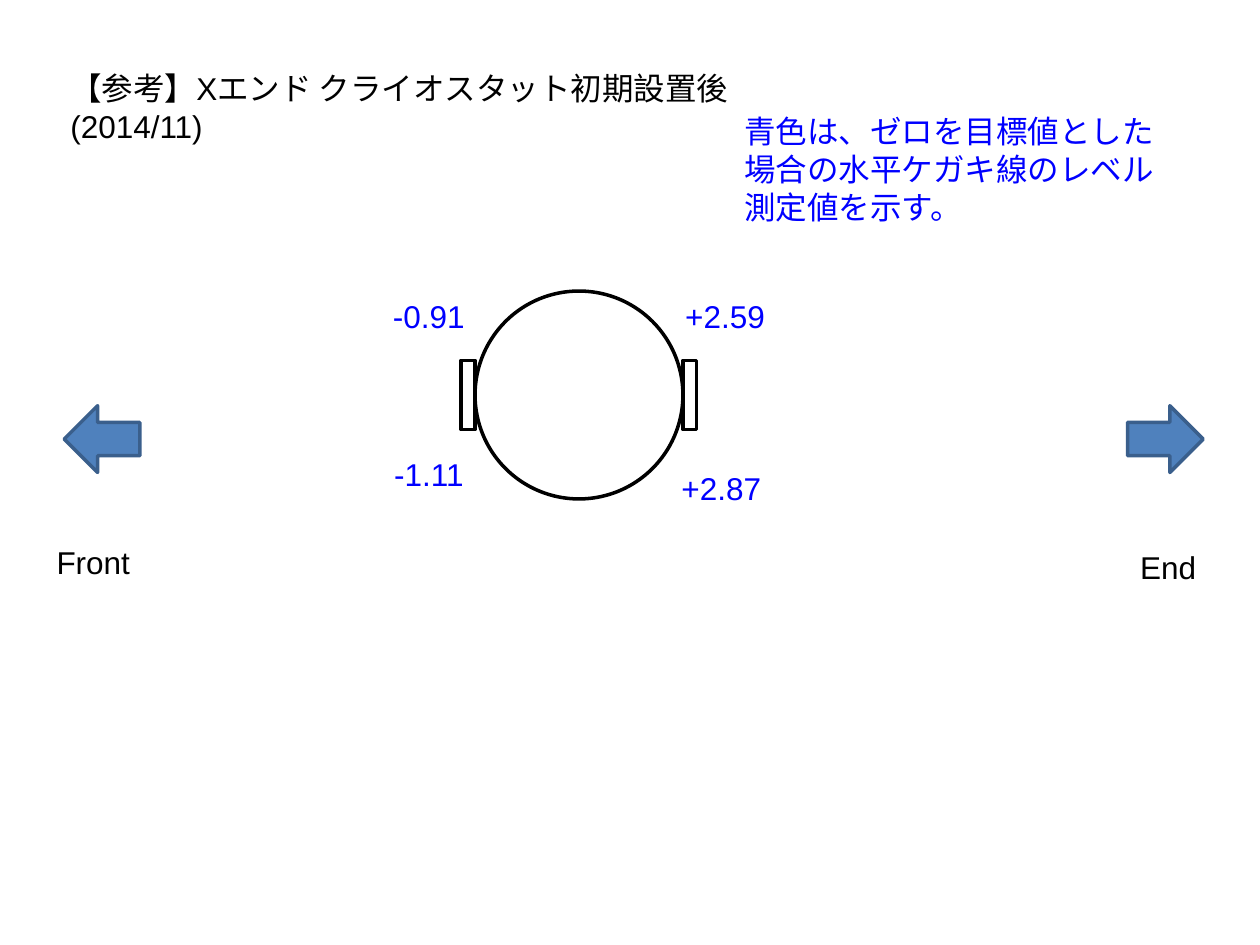
from pptx import Presentation
from pptx.dml.color import RGBColor
from pptx.enum import shapes, text
from pptx.util import Inches, Pt

BLACK = RGBColor(0x00, 0x00, 0x00)
BLUE = RGBColor(0x00, 0x00, 0xFF)
STEEL = RGBColor(0x4F, 0x81, 0xBD)
EDGE = RGBColor(0x3A, 0x5F, 0x8C)
KIND = shapes.MSO_SHAPE


def add_form(parent, kind, box, line, fill=None):
    form = parent.shapes.add_shape(kind, *map(Inches, box))
    form.shadow.inherit = False
    form.line.color.rgb = line
    form.line.width = Pt(2)
    if fill is None:
        form.fill.background()
    else:
        form.fill.solid()
        form.fill.fore_color.rgb = fill


def add_label(slide, words, box, color=BLACK, wrap=False):
    frame = slide.shapes.add_textbox(*map(Inches, box)).text_frame
    frame.word_wrap = wrap
    frame.auto_size = text.MSO_AUTO_SIZE.SHAPE_TO_FIT_TEXT
    run = frame.paragraphs[0].add_run()
    run.text = words
    run.font.name = "Arial"
    run.font.size = Pt(18)
    run.font.color.rgb = color


def add_vessel(slide, left, top, size):
    """Round cryostat section with a flat plate on each side."""
    wide, high = 0.11, 0.55
    group = slide.shapes.add_group_shape()
    add_form(group, KIND.OVAL, (left, top, size, size), BLACK)
    for x in (left - wide, left + size):
        plate = (x, top + (size - high) / 2, wide, high)
        add_form(group, KIND.RECTANGLE, plate, BLACK)


def main():
    deck = Presentation()
    deck.slide_width, deck.slide_height = Inches(10), Inches(7.5)
    slide = deck.slides.add_slide(deck.slide_layouts[6])

    add_vessel(slide, 3.77, 2.31, 1.65)
    for kind, x in ((KIND.RIGHT_ARROW, 8.95), (KIND.LEFT_ARROW, 0.51)):
        add_form(slide, kind, (x, 3.22, 0.6, 0.53), EDGE, STEEL)

    add_label(slide, "End", (8.95, 4.3, 0.65, 0.4))
    add_label(slide, "Front", (0.35, 4.26, 0.79, 0.4))
    add_label(slide, "【参考】Xエンド クライオスタット初期設置後(2014/11)",
              (0.46, 0.5, 5.76, 0.4), wrap=True)

    levels = (
        ("+2.59", 5.34, 2.31, 0.84),
        ("+2.87", 5.31, 3.67, 0.84),
        ("-0.91", 3.02, 2.31, 0.78),
        ("-1.11", 3.03, 3.56, 0.76),
    )
    for value, x, y, width in levels:
        add_label(slide, value, (x, y, width, 0.4), BLUE)
    add_label(slide, "青色は、ゼロを目標値とした場合の水平ケガキ線のレベル測定値を示す。",
              (5.81, 0.84, 3.62, 1.01), BLUE, wrap=True)

    deck.save("out.pptx")


if __name__ == "__main__":
    main()
